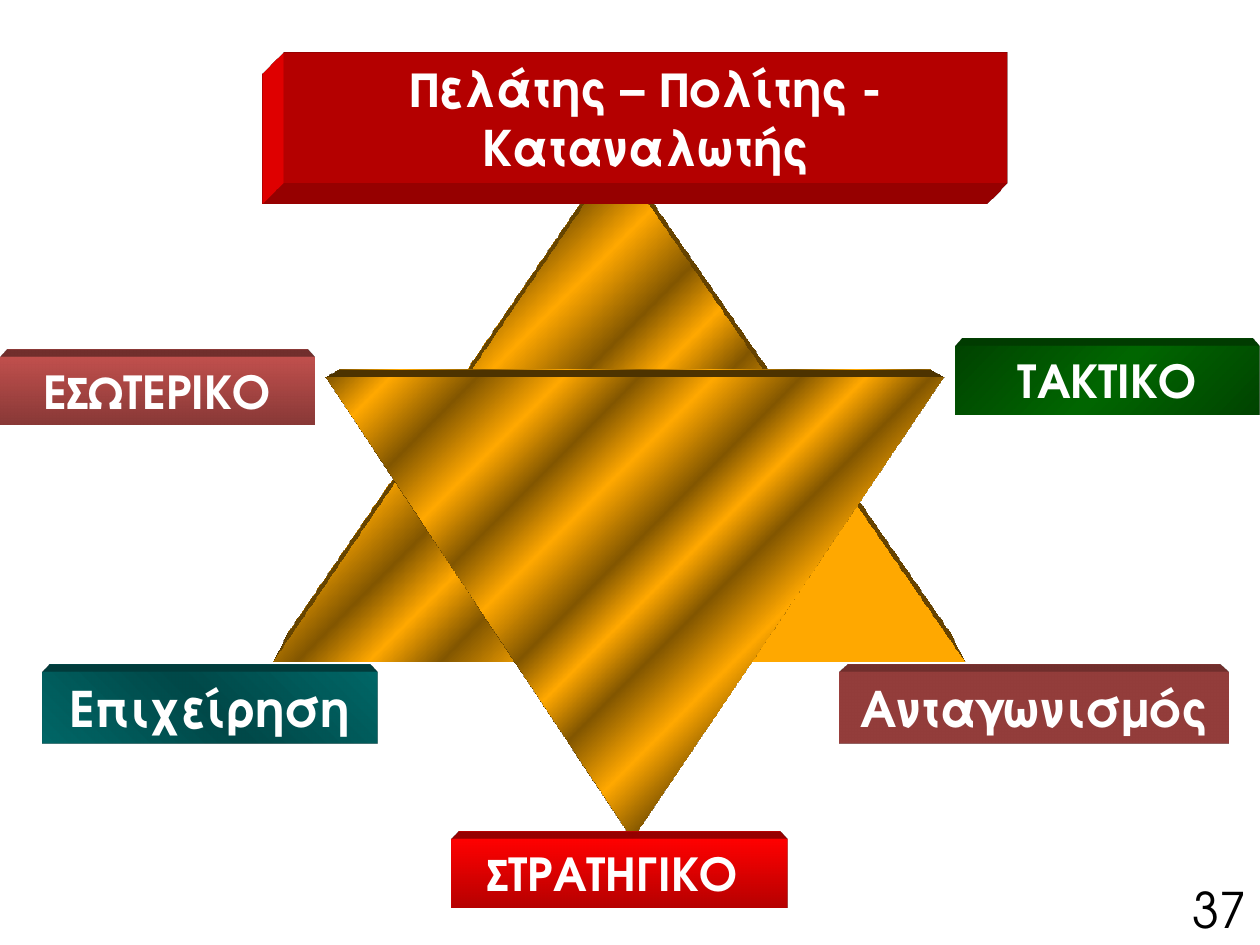
from lxml import etree
from pptx import Presentation
from pptx.dml.color import RGBColor
from pptx.enum.shapes import MSO_SHAPE
from pptx.enum.text import MSO_ANCHOR, MSO_AUTO_SIZE, PP_ALIGN
from pptx.oxml import parse_xml
from pptx.oxml.ns import nsdecls, qn
from pptx.util import Cm, Pt

RECT, TRI = MSO_SHAPE.RECTANGLE, MSO_SHAPE.ISOSCELES_TRIANGLE
CENTER, MIDDLE = PP_ALIGN.CENTER, MSO_ANCHOR.MIDDLE
GROW = MSO_AUTO_SIZE.SHAPE_TO_FIT_TEXT

WHITE = RGBColor(0xFF, 0xFF, 0xFF)
BLACK = RGBColor(0, 0, 0)
RED = RGBColor(0xFF, 0, 0)
DARK_RED = RGBColor(0xB6, 0, 0)
ROSE = RGBColor(0xC0, 0x50, 0x4D)
DARK_ROSE = RGBColor(0x89, 0x39, 0x37)
GREEN = RGBColor(0, 0x66, 0)
DARK_GREEN = RGBColor(0, 0x44, 0)
TEAL = RGBColor(0, 0x66, 0x66)
DARK_TEAL = RGBColor(0, 0x49, 0x49)
GOLD = RGBColor(0xFF, 0xA8, 0)
BROWN = RGBColor(0x82, 0x56, 0)

# Brown and gold take turns across each triangle
MARKS = (0, 6, 14, 22, 29, 36, 44, 50, 56, 64, 71, 78)
STRIPES = [(mark, (BROWN, GOLD)[i % 2]) for i, mark in enumerate(MARKS)]


class Deck:
    font = "TeX Gyre Adventor"

    def __init__(self):
        self.prs = Presentation()
        self.prs.slide_width, self.prs.slide_height = Cm(25.4), Cm(19.05)
        self.slide = self.prs.slides.add_slide(self.prs.slide_layouts[6])

    def shade(self, shape, stops, angle):
        """Fill with colour stops; the angle runs clockwise."""
        shape.fill.gradient()
        shape.fill.gradient_angle = (360 - angle) % 360
        bands = shape._element.spPr.find(qn("a:gradFill")).find(qn("a:gsLst"))
        for old in list(bands):
            bands.remove(old)
        for mark, color in stops:
            stop = etree.SubElement(bands, qn("a:gs"), pos=str(mark * 1000))
            etree.SubElement(stop, qn("a:srgbClr"), val=str(color))

    def extrude(self, shape, color, view, light):
        """Give the shape depth, seen from the named view."""
        props = shape._element.spPr
        props.append(parse_xml(
            f'<a:scene3d {nsdecls("a")}><a:camera prst="{view}"/>'
            f'<a:lightRig rig="legacyFlat3" dir="{light}"/></a:scene3d>'))
        props.append(parse_xml(
            f'<a:sp3d {nsdecls("a")} extrusionH="430200" prstMaterial="legacyMatte">'
            '<a:bevelT w="13500" h="13500" prst="angle"/>'
            '<a:bevelB w="13500" h="13500" prst="angle"/>'
            f'<a:extrusionClr><a:srgbClr val="{color}"/></a:extrusionClr></a:sp3d>'))

    def block(self, kind, box, side, stops=None, angle=0,
              view="legacyPerspectiveTop", light="b"):
        """Draw a solid body; without stops it is filled with its side colour."""
        shape = self.slide.shapes.add_shape(kind, *map(Cm, box))
        if stops:
            self.shade(shape, stops, angle)
        else:
            shape.fill.solid()
            shape.fill.fore_color.rgb = side
        shape.line.fill.background()
        shape.shadow.inherit = False
        self.extrude(shape, side, view, light)
        return shape

    def star(self, box, flip=False):
        shape = self.block(TRI, box, BROWN, STRIPES, 45)
        shape.adjustments[0] = 0.496
        if flip:
            shape._element.spPr.find(qn("a:xfrm")).set("flipV", "1")

    def words(self, shape, text, size, color, bold):
        frame = shape.text_frame
        frame.vertical_anchor = MIDDLE
        frame.auto_size = GROW
        para = frame.paragraphs[0]
        para.alignment = CENTER
        run = para.add_run()
        run.text = text
        run.font.name, run.font.size = self.font, Pt(size)
        run.font.bold, run.font.color.rgb = bold, color
        return para

    def label(self, text, size, box, side, **look):
        shape = self.block(RECT, box, side, **look)
        shape.text_frame.word_wrap = True
        self.words(shape, text, size, WHITE, True)

    def number(self, text, box):
        shape = self.slide.shapes.add_textbox(*map(Cm, box))
        shape.text_frame.word_wrap = False
        self.words(shape, text, 28, BLACK, False).line_spacing = 0.9


def main():
    deck = Deck()

    # Star of two triangles
    deck.star((5.5, 3.18, 13.97, 10.16))
    deck.star((6.56, 7.62, 12.49, 9.31), flip=True)

    # Environments at the points of the front triangle
    deck.label("ΕΣΩΤΕΡΙΚΟ", 26, (0, 7.2, 6.35, 1.36), ROSE,
               stops=[(0, ROSE), (100, DARK_ROSE)], angle=90)
    deck.label("ΤΑΚΤΙΚΟ", 26, (19.26, 6.99, 6.14, 1.36), GREEN,
               stops=[(0, DARK_GREEN), (50, GREEN), (100, DARK_GREEN)], angle=45)
    deck.label("ΣΤΡΑΤΗΓΙΚΟ ", 26, (9.1, 16.93, 6.77, 1.36), RED,
               stops=[(0, RED), (100, DARK_RED)], angle=90)

    # Players at the points of the back triangle
    deck.label("Επιχείρηση", 28, (0.85, 13.55, 6.77, 1.45), TEAL,
               stops=[(0, TEAL), (50, DARK_TEAL), (100, TEAL)], angle=315)
    deck.label("Ανταγωνισμός", 28, (16.93, 13.55, 7.83, 1.45), ROSE)
    deck.label("Πελάτης – Πολίτης - Καταναλωτής", 28, (5.72, 1.06, 14.6, 2.62), RED,
               view="legacyObliqueBottomLeft", light="t")

    # Slide number
    deck.number("37", (23.77, 17.73, 1.63, 1.32))

    deck.prs.save("out.pptx")


if __name__ == "__main__":
    main()
